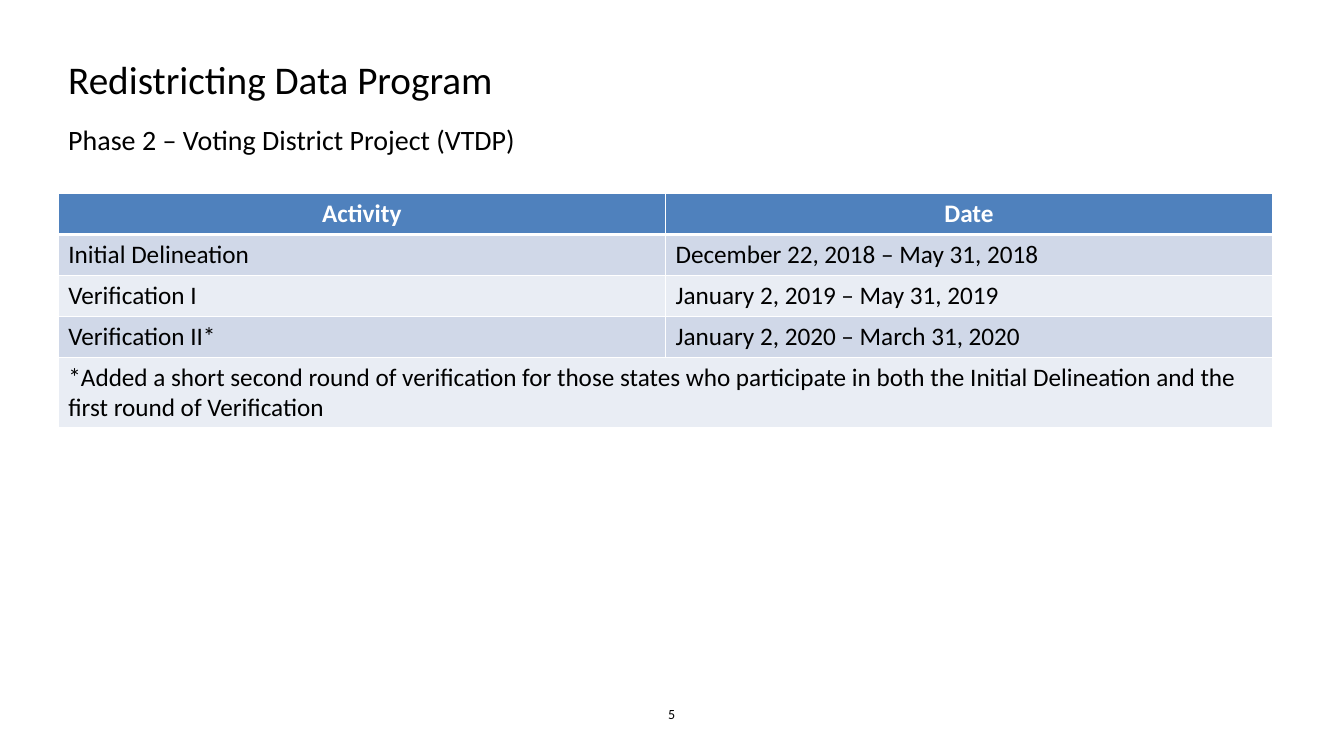
from dataclasses import dataclass

import pptx
import pptx.dml.color
import pptx.enum.text
import pptx.oxml
import pptx.oxml.ns
import pptx.slide
import pptx.table
import pptx.text.text
import pptx.util
from pptx.util import Cm

COLORS = {
    "text": "000000",
    "white": "FFFFFF",
    "header": "4F81BD",
    "odd_row": "D0D8E8",
    "even_row": "E9EDF4",
}
FONT = "Calibri"
ALIGN = pptx.enum.text.PP_ALIGN

LEFT = 1.47
TABLE_TOP = 4.88
TABLE_WIDTH = 30.6
ROW_HEIGHT = 1.03
NOTE_HEIGHT = 1.78


@dataclass
class Label:
    text: str
    left: float
    top: float
    width: float
    height: float
    size: int
    align: ALIGN = ALIGN.LEFT


LABELS = [
    Label("Phase 2 – Voting District Project (VTDP)", LEFT, 2.97, TABLE_WIDTH, 7.09, 20),
    Label("5", 12.98, 17.65, 7.9, 1.02, 10, ALIGN.CENTER),
    Label("Redistricting Data Program", LEFT, 1.27, 31.32, 1.27, 28),
]

SCHEDULE = [
    ("Activity", "Date"),
    ("Initial Delineation", "December 22, 2018 – May 31, 2018"),
    ("Verification I", "January 2, 2019 – May 31, 2019"),
    ("Verification II*", "January 2, 2020 – March 31, 2020"),
    (
        "*Added a short second round of verification for those states who participate "
        "in both the Initial Delineation and the first round of Verification",
    ),
]


def rgb(name: str) -> pptx.dml.color.RGBColor:
    return pptx.dml.color.RGBColor.from_string(COLORS[name])


def write_text(frame: pptx.text.text.TextFrame, text: str, *, size: int,
               color: str = "text", bold: bool = False,
               align: ALIGN = ALIGN.LEFT) -> None:
    paragraph = frame.paragraphs[0]
    paragraph.alignment = align
    run = paragraph.add_run()
    run.text = text
    run.font.name = FONT
    run.font.size = pptx.util.Pt(size)
    run.font.bold = bold
    run.font.color.rgb = rgb(color)


def add_label(slide: pptx.slide.Slide, label: Label) -> None:
    shape = slide.shapes.add_textbox(
        Cm(label.left), Cm(label.top), Cm(label.width), Cm(label.height))
    shape.text_frame.word_wrap = True
    write_text(shape.text_frame, label.text, size=label.size, align=label.align)


def set_borders(cell: pptx.table._Cell, bottom_points: int) -> None:
    properties = cell._tc.get_or_add_tcPr()
    widths = {"lnL": 1, "lnR": 1, "lnT": 1, "lnB": bottom_points}
    for position, (side, points) in enumerate(widths.items()):
        line = pptx.oxml.parse_xml(
            f'<a:{side} {pptx.oxml.ns.nsdecls("a")} w="{pptx.util.Pt(points)}">'
            f'<a:solidFill><a:srgbClr val="{COLORS["white"]}"/></a:solidFill></a:{side}>')
        properties.insert(position, line)


def add_schedule(slide: pptx.slide.Slide) -> None:
    row_count = len(SCHEDULE)
    column_count = len(SCHEDULE[0])
    height = (row_count - 1) * ROW_HEIGHT + NOTE_HEIGHT
    table = slide.shapes.add_table(
        row_count, column_count, Cm(LEFT), Cm(TABLE_TOP), Cm(TABLE_WIDTH), Cm(height)).table

    for row_index, texts in enumerate(SCHEDULE):
        is_header = row_index == 0
        is_note = len(texts) < column_count
        table.rows[row_index].height = Cm(NOTE_HEIGHT if is_note else ROW_HEIGHT)
        fill = "header" if is_header else "odd_row" if row_index % 2 else "even_row"
        for column_index in range(column_count):
            cell = table.cell(row_index, column_index)
            cell.fill.solid()
            cell.fill.fore_color.rgb = rgb(fill)
            set_borders(cell, 3 if is_header else 1)
        if is_note:
            table.cell(row_index, 0).merge(table.cell(row_index, column_count - 1))
        for column_index, text in enumerate(texts):
            write_text(table.cell(row_index, column_index).text_frame, text, size=18,
                       color="white" if is_header else "text", bold=is_header,
                       align=ALIGN.CENTER if is_header else ALIGN.LEFT)


def main() -> None:
    presentation = pptx.Presentation()
    presentation.slide_width = Cm(33.87)
    presentation.slide_height = Cm(19.05)
    slide = presentation.slides.add_slide(presentation.slide_layouts[6])

    # Title, subtitle and page number
    for label in LABELS:
        add_label(slide, label)

    # Schedule of the phase
    add_schedule(slide)

    presentation.save("out.pptx")


if __name__ == "__main__":
    main()
